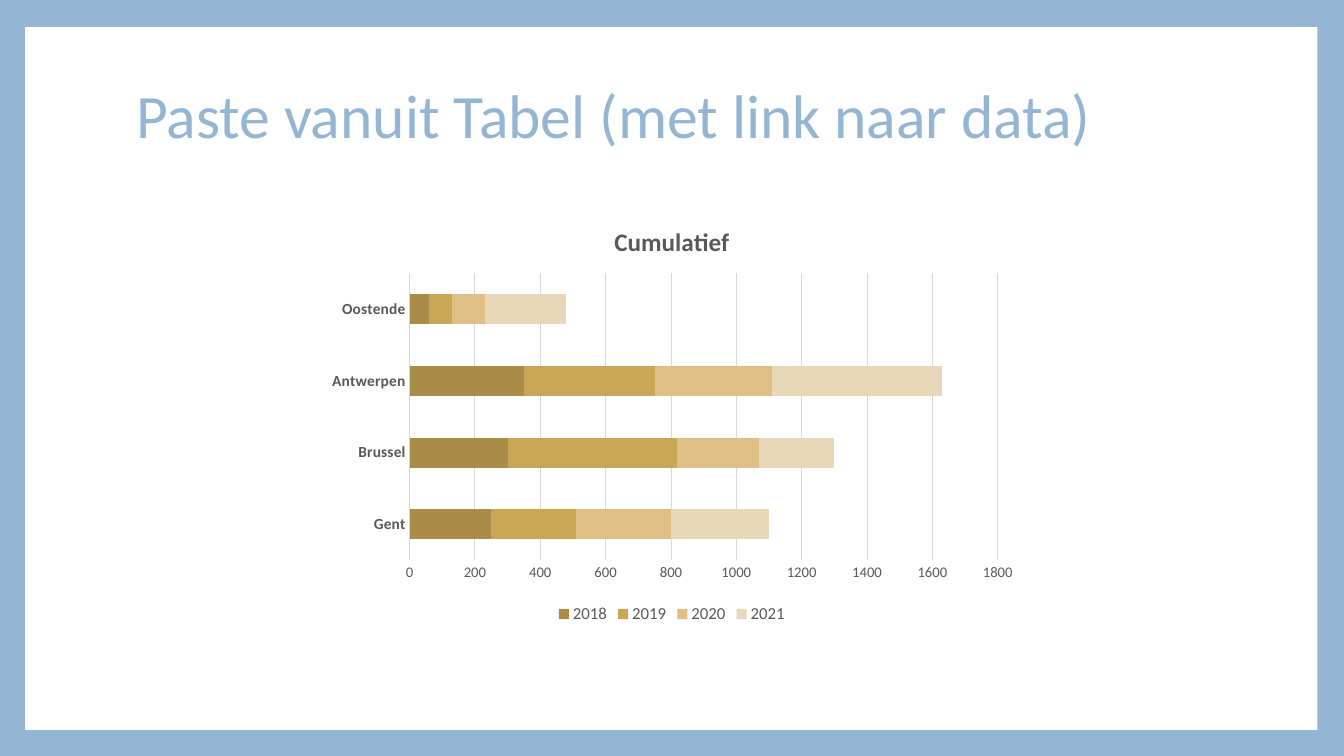
from dataclasses import dataclass

from lxml.etree import SubElement
from pptx import Presentation
from pptx.chart.chart import Chart
from pptx.chart.data import CategoryChartData
from pptx.dml.color import RGBColor
from pptx.enum.chart import XL_CHART_TYPE as ChartType
from pptx.enum.chart import XL_LEGEND_POSITION as LegendPosition
from pptx.enum.chart import XL_TICK_MARK as TickMark
from pptx.enum.shapes import MSO_SHAPE as ShapeKind
from pptx.enum.text import MSO_ANCHOR as Anchor
from pptx.enum.text import MSO_AUTO_SIZE as AutoSize
from pptx.enum.text import PP_ALIGN as Align
from pptx.oxml.ns import qn
from pptx.slide import Slide
from pptx.text.text import Font
from pptx.util import Pt

BLUE = RGBColor(0x94, 0xB6, 0xD2)
WHITE = RGBColor(0xFF, 0xFF, 0xFF)
BLACK = RGBColor(0x00, 0x00, 0x00)
GREY = RGBColor(0x59, 0x59, 0x59)
LIGHT_GREY = RGBColor(0xD9, 0xD9, 0xD9)
FONT_NAME = "Calibri"

CITIES = ("Gent", "Brussel", "Antwerpen", "Oostende")
# Plot area as fractions of the chart frame
PLOT_AREA = {"x": 0.13, "y": 0.16, "w": 0.83, "h": 0.68}


@dataclass(frozen=True)
class YearSeries:
    year: str
    values: tuple[int, ...]
    color: RGBColor


YEARS = (
    YearSeries("2018", (250, 300, 350, 60), RGBColor(0xAA, 0x8C, 0x49)),
    YearSeries("2019", (260, 520, 400, 70), RGBColor(0xCA, 0xA7, 0x56)),
    YearSeries("2020", (290, 250, 360, 100), RGBColor(0xDE, 0xBF, 0x85)),
    YearSeries("2021", (300, 230, 520, 250), RGBColor(0xE9, 0xD7, 0xB9)),
)


def style_font(font: Font, size: float, color: RGBColor, bold: bool = False) -> None:
    font.name = FONT_NAME
    font.size = Pt(size)
    font.bold = bold
    font.color.rgb = color


def add_page_frame(page: Slide) -> None:
    page.background.fill.solid()
    page.background.fill.fore_color.rgb = BLUE
    panel = page.shapes.add_shape(
        ShapeKind.RECTANGLE, Pt(18), Pt(19.3), Pt(923), Pt(502)
    )
    panel.shadow.inherit = False
    panel.fill.solid()
    panel.fill.fore_color.rgb = WHITE
    panel.line.fill.background()
    # Keep the panel behind the title placeholder
    tree = page.shapes.element
    tree.remove(panel.element)
    tree.insert(2, panel.element)


def fill_title(page: Slide, text: str) -> None:
    title = page.shapes.title
    title.left, title.top, title.width, title.height = Pt(90), Pt(48), Pt(778), Pt(73)
    frame = title.text_frame
    frame.word_wrap = True
    frame.auto_size = AutoSize.NONE
    frame.vertical_anchor = Anchor.MIDDLE
    para = frame.paragraphs[0]
    para.alignment = Align.LEFT
    para.line_spacing = 0.9
    span = para.add_run()
    span.text = text
    style_font(span.font, 44, BLUE)


def set_plot_layout(chart: Chart) -> None:
    plot_area = chart.element.find(".//" + qn("c:plotArea"))
    for old_layout in plot_area.findall(qn("c:layout")):
        plot_area.remove(old_layout)
    layout = SubElement(plot_area, qn("c:layout"))
    plot_area.insert(0, layout)
    manual = SubElement(layout, qn("c:manualLayout"))
    settings = {"layoutTarget": "inner", "xMode": "edge", "yMode": "edge", **PLOT_AREA}
    for tag, value in settings.items():
        SubElement(manual, qn("c:" + tag)).set("val", str(value))


def add_city_chart(page: Slide) -> None:
    data = CategoryChartData()
    data.categories = CITIES
    for entry in YEARS:
        data.add_series(entry.year, entry.values)
    chart = page.shapes.add_chart(
        ChartType.BAR_STACKED, Pt(226.8), Pt(146.9), Pt(506.2), Pt(301.7), data
    ).chart
    style_font(chart.font, 10, BLACK)

    # Chart title and legend
    chart.has_title = True
    span = chart.chart_title.text_frame.paragraphs[0].add_run()
    span.text = "Cumulatief"
    style_font(span.font, 18, GREY, bold=True)
    chart.chart_title.include_in_layout = False
    chart.has_legend = True
    chart.legend.position = LegendPosition.BOTTOM
    chart.legend.include_in_layout = False
    style_font(chart.legend.font, 12, GREY)

    # Bars
    plot = chart.plots[0]
    plot.gap_width = 139
    plot.overlap = 100
    plot.vary_by_categories = False
    for series, entry in zip(plot.series, YEARS):
        series.format.fill.solid()
        series.format.fill.fore_color.rgb = entry.color

    # Axes and gridlines
    cities, amounts = chart.category_axis, chart.value_axis
    for axis in (cities, amounts):
        axis.major_tick_mark = axis.minor_tick_mark = TickMark.NONE
    style_font(cities.tick_labels.font, 11, GREY, bold=True)
    style_font(amounts.tick_labels.font, 10.5, GREY)
    amounts.minimum_scale, amounts.maximum_scale, amounts.major_unit = 0, 1800, 200
    amounts.has_major_gridlines = True
    amounts.format.line.fill.background()
    for line in (cities.format.line, amounts.major_gridlines.format.line):
        line.color.rgb = LIGHT_GREY
        line.width = Pt(0.75)
    set_plot_layout(chart)


def main() -> None:
    deck = Presentation()
    deck.slide_width, deck.slide_height = Pt(960), Pt(540)
    page = deck.slides.add_slide(deck.slide_layouts.get_by_name("Title Only"))
    add_page_frame(page)
    fill_title(page, "Paste vanuit Tabel (met link naar data)")
    add_city_chart(page)
    deck.save("out.pptx")


if __name__ == "__main__":
    main()
